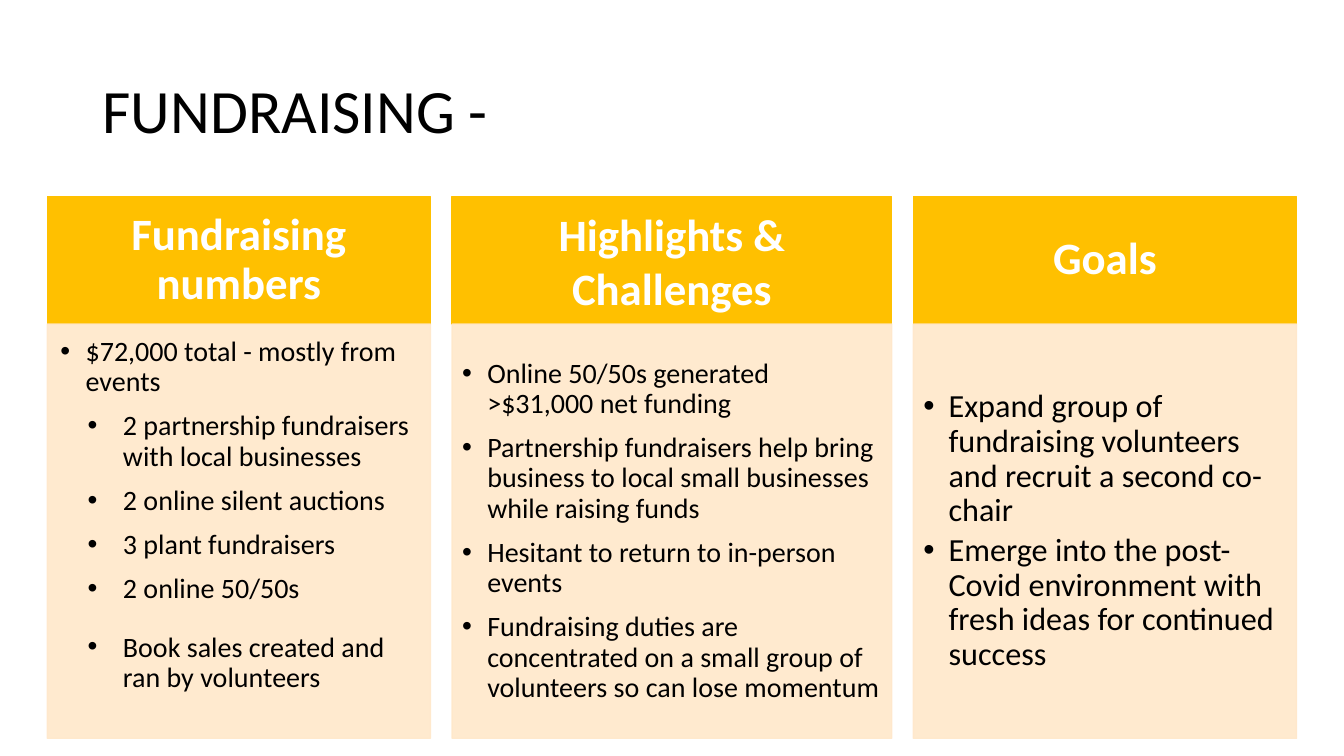
from lxml import etree
from pptx import Presentation
from pptx.dml.color import RGBColor
from pptx.enum.shapes import MSO_SHAPE
from pptx.enum.text import MSO_ANCHOR, PP_ALIGN
from pptx.oxml.ns import qn
from pptx.util import Inches, Pt

RECT = MSO_SHAPE.RECTANGLE
TOP, MIDDLE = MSO_ANCHOR.TOP, MSO_ANCHOR.MIDDLE
LEFT, CENTER = PP_ALIGN.LEFT, PP_ALIGN.CENTER

GOLD = RGBColor(0xFF, 0xC0, 0x00)
CREAM = RGBColor(0xFF, 0xE8, 0xCA)
WHITE = RGBColor(0xFF, 0xFF, 0xFF)
BLACK = RGBColor(0x00, 0x00, 0x00)
FONT = "Calibri"

# Grid in inches: three columns with equal gaps, a header row and a body row
GRID_LEFT, GAP = 0.47, 0.215
HEAD_TOP, HEAD_H = 1.95, 1.265
BODY_H = 4.11
EVEN = (0.1, 0.1, 0.1, 0.1)

# Indents in inches for each bullet level: left margin, hanging indent
INDENTS = {1: (0.25, -0.25), 2: (0.62, -0.35)}

# Bullets: text, level, space before, space after
COLUMNS = [
    dict(width=3.8, title="Fundraising numbers", head_inset=(0.25, 0.14, 0.25, 0.14),
         size=20, anchor=TOP, inset=(0.13, 0.13, 0.18, 0.2), bullets=[
             ("$72,000 total - mostly from events", 1, 0, 0),
             ("2 partnership fundraisers with local businesses", 2, 10, 0),
             ("2 online silent auctions", 2, 10, 0),
             ("3 plant fundraisers", 2, 10, 0),
             ("2 online 50/50s", 2, 10, 10),
             ("Book sales created and ran by volunteers", 2, 10, 10)]),
    dict(width=4.36, title="Highlights & Challenges", head_spacing=1.0, size=20, bullets=[
        ("Online 50/50s generated >$31,000 net funding", 1, 0, 0),
        ("Partnership fundraisers help bring business to local small businesses "
         "while raising funds", 1, 10, 0),
        ("Hesitant to return to in-person events", 1, 10, 0),
        ("Fundraising duties are concentrated on a small group of volunteers "
         "so can lose momentum", 1, 10, 0)]),
    dict(width=3.8, title="Goals", size=23, bullets=[
        ("Expand group of fundraising volunteers and recruit a second co-chair", 1, 3.5, 0),
        ("Emerge into the post-Covid environment with fresh ideas for continued "
         "success", 1, 3.5, 0)]),
]


def set_frame(tf, anchor=MIDDLE, inset=EVEN):
    tf.word_wrap = True
    tf.vertical_anchor = anchor
    tf.margin_left, tf.margin_top, tf.margin_right, tf.margin_bottom = map(Inches, inset)


def write(p, text, size, color=BLACK, bold=False, align=LEFT, spacing=0.9, before=0, after=0):
    p.alignment = align
    p.line_spacing = spacing
    p.space_before, p.space_after = Pt(before), Pt(after)
    r = p.add_run()
    r.text = text
    r.font.name, r.font.size, r.font.bold = FONT, Pt(size), bold
    r.font.color.rgb = color


def add_bullet(p, level):
    margin, indent = INDENTS[level]
    p.level = level
    pPr = p._p.get_or_add_pPr()
    pPr.set("marL", str(Inches(margin)))
    pPr.set("indent", str(Inches(indent)))
    etree.SubElement(pPr, qn("a:buFont")).set("typeface", "Arial")
    etree.SubElement(pPr, qn("a:buChar")).set("char", "•")


def add_panel(s, x, y, w, h, color, opacity=100):
    sp = s.shapes.add_shape(RECT, *map(Inches, (x, y, w, h)))
    sp.shadow.inherit = False
    sp.fill.solid()
    sp.fill.fore_color.rgb = color
    sp.line.color.rgb = color
    sp.line.width = Pt(1)
    if opacity < 100:
        for clr in sp._element.spPr.iter(qn("a:srgbClr")):
            etree.SubElement(clr, qn("a:alpha")).set("val", str(opacity * 1000))
    return sp


def add_column(s, x, width, title, bullets, size, anchor=MIDDLE, inset=EVEN,
               head_inset=EVEN, head_spacing=0.9):
    # Header
    tf = add_panel(s, x, HEAD_TOP, width, HEAD_H, GOLD).text_frame
    set_frame(tf, inset=head_inset)
    write(tf.paragraphs[0], title, 32, color=WHITE, bold=True, align=CENTER,
          spacing=head_spacing)
    # Bullet list
    tf = add_panel(s, x, HEAD_TOP + HEAD_H, width, BODY_H, CREAM, opacity=89).text_frame
    set_frame(tf, anchor, inset)
    for i, (text, level, before, after) in enumerate(bullets):
        p = tf.add_paragraph() if i else tf.paragraphs[0]
        write(p, text, size, before=before, after=after)
        add_bullet(p, level)


def add_title(s, text):
    tf = s.shapes.add_textbox(*map(Inches, (0.92, 0.4, 11.5, 1.45))).text_frame
    set_frame(tf, inset=(0.1, 0.05, 0.1, 0.05))
    write(tf.paragraphs[0], text, 44)


def main():
    prs = Presentation()
    prs.slide_width, prs.slide_height = Inches(13.33), Inches(7.5)
    s = prs.slides.add_slide(prs.slide_layouts[6])
    add_title(s, "FUNDRAISING -")
    x = GRID_LEFT
    for column in COLUMNS:
        add_column(s, x, **column)
        x += column["width"] + GAP
    prs.save("out.pptx")


if __name__ == "__main__":
    main()
